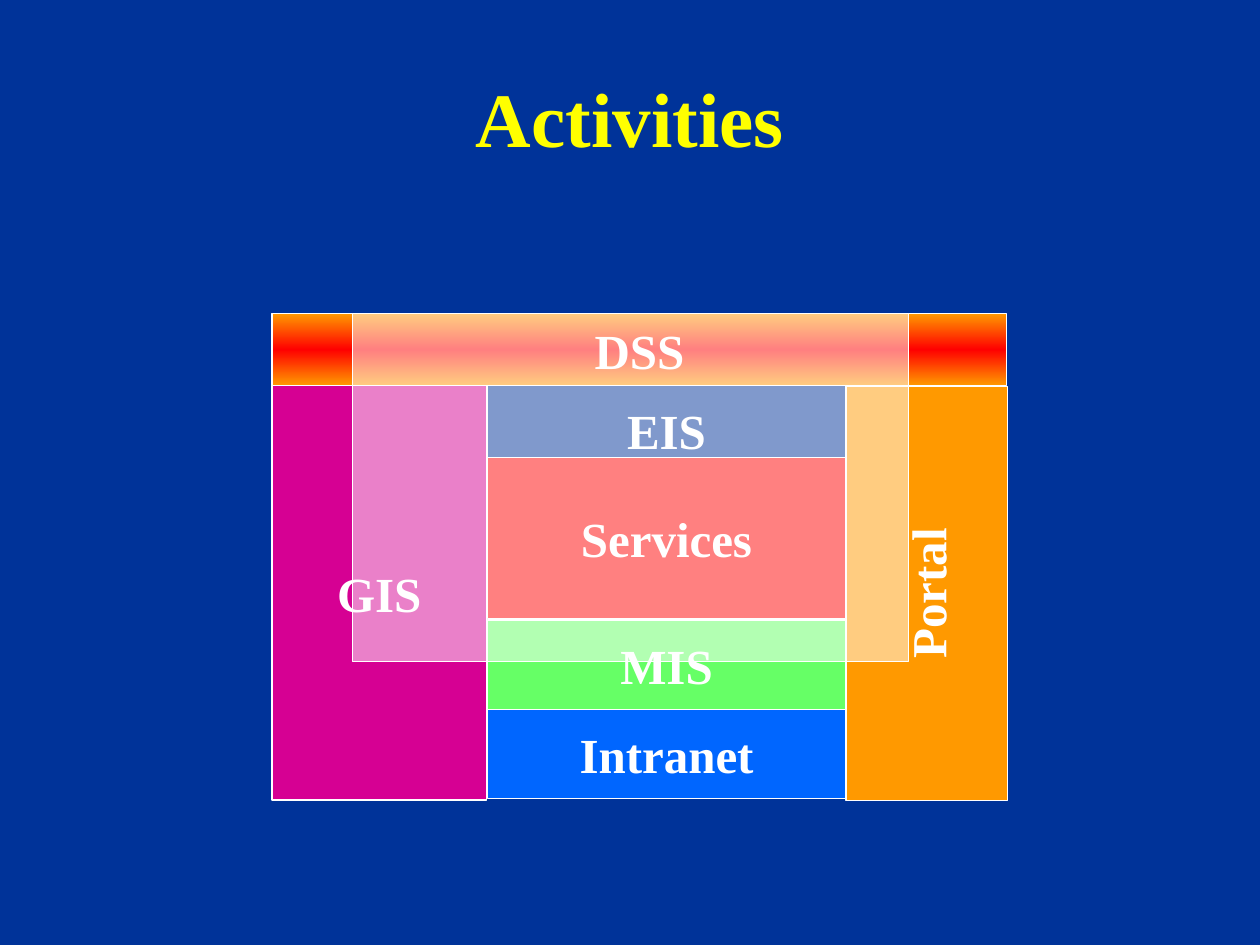
from copy import deepcopy

from lxml import etree
from pptx import Presentation
from pptx.dml.color import RGBColor
from pptx.enum import shapes, text
from pptx.oxml import ns
from pptx.util import Inches, Pt

NAVY = RGBColor(0x00, 0x33, 0x99)
YELLOW = RGBColor(0xFF, 0xFF, 0x00)
WHITE = RGBColor(0xFF, 0xFF, 0xFF)
MAGENTA = RGBColor(0xD6, 0x00, 0x93)
ORANGE = RGBColor(0xFF, 0x99, 0x00)
RED = RGBColor(0xFF, 0x00, 0x00)
GREEN = RGBColor(0x66, 0xFF, 0x66)
BLUE = RGBColor(0x00, 0x66, 0xFF)


def write(frame, label, size, color):
    """Put one centred bold run into a text frame."""
    frame.vertical_anchor = text.MSO_ANCHOR.MIDDLE
    paragraph = frame.paragraphs[0]
    paragraph.alignment = text.PP_ALIGN.CENTER
    run = paragraph.add_run()
    run.text = label
    run.font.name = "Times New Roman"
    run.font.size = Pt(size)
    run.font.bold = True
    run.font.color.rgb = color


def add_block(left, top, width, height, fill):
    block = slide.shapes.add_shape(
        shapes.MSO_SHAPE.RECTANGLE,
        Inches(left), Inches(top), Inches(width), Inches(height))
    block.shadow.inherit = False
    block.fill.solid()
    block.fill.fore_color.rgb = fill
    block.line.color.rgb = WHITE
    block.line.width = Pt(0.75)
    return block


prs = Presentation()
prs.slide_width, prs.slide_height = Inches(10), Inches(7.5)
slide = prs.slides.add_slide(prs.slide_layouts[5])
slide.background.fill.solid()
slide.background.fill.fore_color.rgb = NAVY

title = slide.shapes.title
title.left, title.top = Inches(0.5), Inches(0.3)
title.width, title.height = Inches(9), Inches(1.25)
write(title.text_frame, "Activities", 44, YELLOW)

# Label, left, top, width, height, fill, rotation; from back to front
CORE_LEFT, CORE_WIDTH = 3.87, 2.84
activities = [
    ("GIS", 2.16, 3.06, 1.7, 3.29, MAGENTA, 0),
    ("DSS", 2.16, 2.49, 5.83, 0.57, ORANGE, 0),
    ("MIS", CORE_LEFT, 4.92, CORE_WIDTH, 0.72, GREEN, 0),
    ("Portal", 5.71, 4.07, 3.29, 1.28, ORANGE, 270),
    ("EIS", CORE_LEFT, 3.06, CORE_WIDTH, 0.71, NAVY, 0),
    ("Services", CORE_LEFT, 3.63, CORE_WIDTH, 1.28, RED, 0),
    ("Intranet", CORE_LEFT, 5.63, CORE_WIDTH, 0.71, BLUE, 0),
]
blocks = {}
for label, left, top, width, height, fill, rotation in activities:
    block = add_block(left, top, width, height, fill)
    block.rotation = rotation
    block.text_frame.word_wrap = False
    write(block.text_frame, label, 28, WHITE)
    blocks[label] = block

# The DSS bar runs orange, red, orange from top to bottom
dss_fill = blocks["DSS"].fill
dss_fill.gradient()
dss_fill.gradient_angle = 270
stop_list = next(blocks["DSS"].element.spPr.iter(ns.qn("a:gsLst")))
stop_list.append(deepcopy(stop_list[-1]))
for stop, position, color in zip(dss_fill.gradient_stops, (0, 0.5, 1), (ORANGE, RED, ORANGE)):
    stop.position = position
    stop.color.rgb = color

# Half-transparent veil across the upper activities
veil = add_block(2.8, 2.49, 4.41, 2.76, WHITE)
veil_color = veil.element.spPr.find(ns.qn("a:solidFill"))[0]
etree.SubElement(veil_color, ns.qn("a:alpha"), val="50000")

prs.save("out.pptx")
